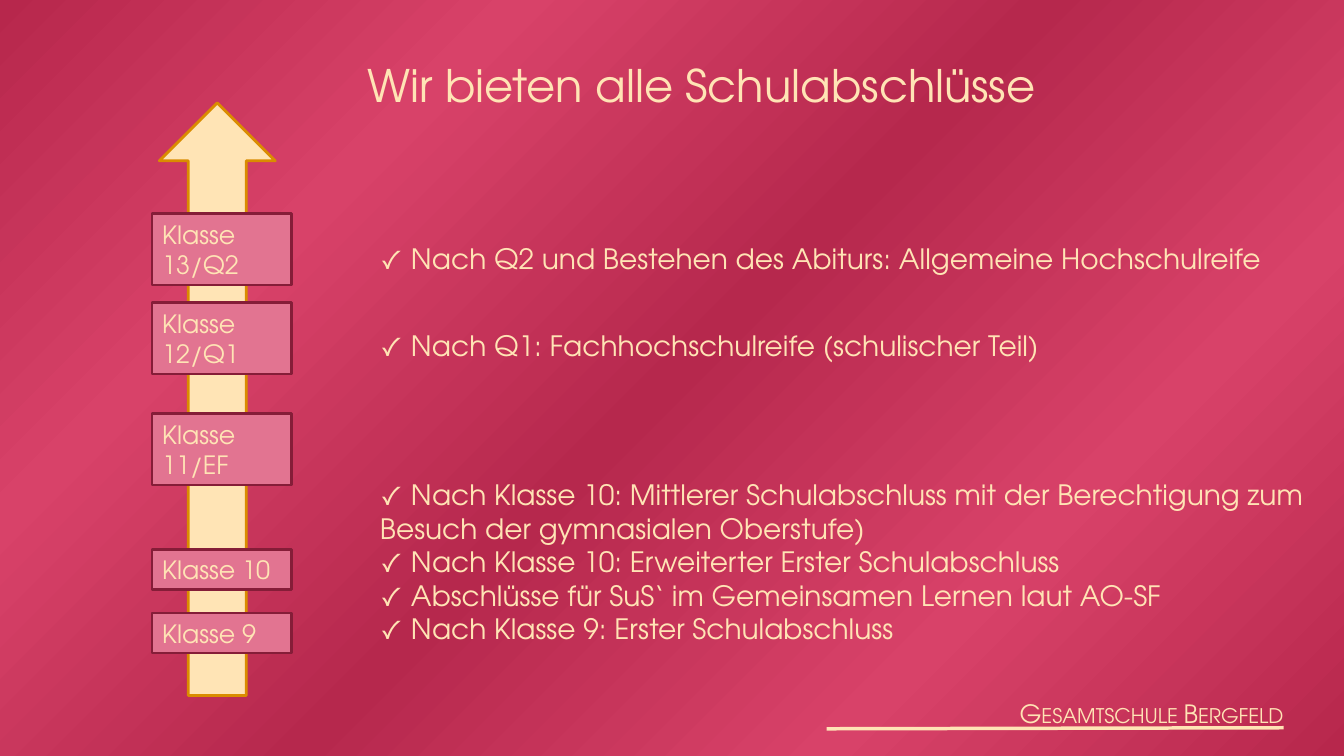
from dataclasses import dataclass

from lxml.etree import SubElement
from pptx import Presentation
from pptx.dml.color import RGBColor
from pptx.enum.shapes import MSO_CONNECTOR, MSO_SHAPE
from pptx.enum.text import MSO_ANCHOR, MSO_AUTO_SIZE, PP_ALIGN
from pptx.oxml.ns import qn
from pptx.util import Inches, Pt


@dataclass(frozen=True)
class Theme:
    """Colours, font and type sizes of the slide."""
    font: str = "TeX Gyre Adventor"
    cream: str = "FFE4B5"
    arrow_edge: str = "DA8C00"
    label_fill: str = "E27491"
    label_edge: str = "851D38"
    gradient: tuple = ("B7274C", "D84269", "B6284D", "D84269", "B7274C")
    title_size: int = 32
    body_size: int = 20
    label_size: int = 18


THEME = Theme()

GRADES = [
    ("Klasse 9", 5.06, 0.4),
    ("Klasse 10", 4.43, 0.4),
    ("Klasse 11/EF", 3.08, 0.71),
    ("Klasse 12/Q1", 1.98, 0.71),
    ("Klasse 13/Q2", 1.1, 0.71),
]

DEGREES = [
    (0, 9.13, 0.44, ["✓ Nach Q2 und Bestehen des Abiturs: Allgemeine Hochschulreife"]),
    (0.87, 7.76, 0.44, ["✓ Nach Q1: Fachhochschulreife (schulischer Teil)"]),
    (2.34, 9.45, 1.78, [
        "✓ Nach Klasse 10: Mittlerer Schulabschluss mit der Berechtigung zum "
        "Besuch der gymnasialen Oberstufe)",
        "✓ Nach Klasse 10: Erweiterter Erster Schulabschluss",
        "✓ Abschlüsse für SuS‘ im Gemeinsamen Lernen laut AO-SF",
        "✓ Nach Klasse 9: Erster Schulabschluss",
    ]),
]


def inches(*lengths):
    """Convert a row of numbers to lengths."""
    return [Inches(length) for length in lengths]


def write(frame, lines, size, align=PP_ALIGN.LEFT, anchor=MSO_ANCHOR.MIDDLE):
    """Write one paragraph per line and return the last run."""
    frame.word_wrap = True
    frame.auto_size = MSO_AUTO_SIZE.SHAPE_TO_FIT_TEXT
    frame.vertical_anchor = anchor
    for index, line in enumerate(lines):
        paragraph = frame.add_paragraph() if index else frame.paragraphs[0]
        paragraph.alignment = align
        run = paragraph.add_run()
        run.text = line
        run.font.name = THEME.font
        run.font.size = Pt(size)
        run.font.color.rgb = RGBColor.from_string(THEME.cream)
    return run


def add_block(slide, kind, box, fill, edge, edge_width):
    """Add a filled and outlined shape without shadow."""
    block = slide.shapes.add_shape(kind, *inches(*box))
    block.shadow.inherit = False
    block.fill.solid()
    block.fill.fore_color.rgb = RGBColor.from_string(fill)
    block.line.color.rgb = RGBColor.from_string(edge)
    block.line.width = Pt(edge_width)
    return block


def paint_background(slide):
    """Fill the background with evenly spaced diagonal colour bands."""
    slide.background.fill.gradient()
    gradient = slide.element.find(".//" + qn("a:gradFill"))
    stops = gradient.find(qn("a:gsLst"))
    for stop in list(stops):
        stops.remove(stop)
    step = 100000 // (len(THEME.gradient) - 1)
    for index, colour in enumerate(THEME.gradient):
        stop = SubElement(stops, qn("a:gs"), pos=str(index * step))
        SubElement(stop, qn("a:srgbClr"), val=colour)
    direction = gradient.find(qn("a:lin"))
    direction.set("ang", str(45 * 60000))
    direction.set("scaled", "0")


def add_footer(slide, left, top, width, height):
    """Place the school name above its rule."""
    name_box = slide.shapes.add_textbox(*inches(left + 0.39, top, width - 0.39, height))
    name_box.text_frame.margin_right = 0
    name = write(name_box.text_frame, ["Gesamtschule Bergfeld"], THEME.label_size,
                 PP_ALIGN.RIGHT, MSO_ANCHOR.TOP)
    name.font._element.set("cap", "small")
    rule = slide.shapes.add_connector(
        MSO_CONNECTOR.STRAIGHT,
        *inches(left, top + 0.35, left + width, top + 0.34))
    rule.line.color.rgb = RGBColor.from_string(THEME.cream)
    rule.line.width = Pt(2.5)
    SubElement(rule._element.spPr, qn("a:effectLst"))


def add_grade_arrow(slide, left, top, width, height):
    """Place the upward arrow with the grade labels across it."""
    arrow_width = 1.15
    arrow_left = left + 0.07
    add_block(slide, MSO_SHAPE.UP_ARROW, (arrow_left, top, arrow_width, height),
              THEME.cream, THEME.arrow_edge, 2)
    for grade, offset, label_height in GRADES:
        label = add_block(slide, MSO_SHAPE.RECTANGLE,
                          (left, top + offset, width, label_height),
                          THEME.label_fill, THEME.label_edge, 1.75)
        write(label.text_frame, [grade], THEME.label_size)


def add_degrees(slide, left, top):
    """Place the school-leaving certificates beside their grades."""
    for offset, width, height, lines in DEGREES:
        degree = slide.shapes.add_textbox(*inches(left, top + offset, width, height))
        write(degree.text_frame, lines, THEME.body_size)


def add_title(slide, left, top, width, height):
    """Place the centred heading."""
    title = slide.shapes.add_textbox(*inches(left, top, width, height))
    write(title.text_frame, ["Wir bieten alle Schulabschlüsse"], THEME.title_size,
          PP_ALIGN.CENTER, MSO_ANCHOR.TOP)


def main():
    """Build the slide and save it."""
    deck = Presentation()
    deck.slide_width, deck.slide_height = inches(13.33, 7.5)
    slide = deck.slides.add_slide(deck.slide_layouts[6])
    paint_background(slide)
    add_footer(slide, 8.2, 6.88, 4.53, 0.4)
    add_grade_arrow(slide, 1.51, 1.02, 1.38, 5.88)
    add_degrees(slide, 3.67, 2.34)
    add_title(slide, 3.08, 0.52, 7.76, 0.64)
    deck.save("out.pptx")


if __name__ == "__main__":
    main()
